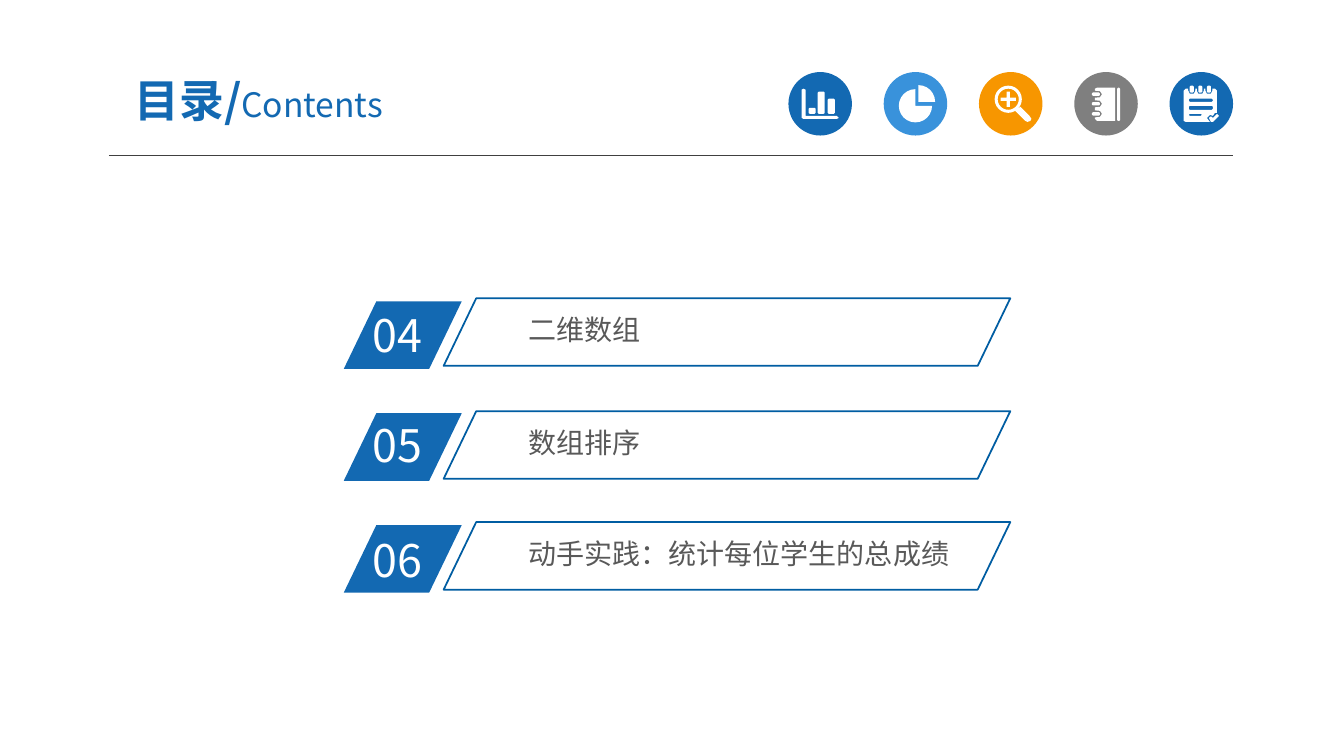
from dataclasses import dataclass
from math import cos, radians, sin

from lxml import etree
from pptx import Presentation
from pptx.dml.color import RGBColor
from pptx.enum.shapes import MSO_CONNECTOR, MSO_SHAPE
from pptx.enum.text import MSO_ANCHOR, PP_ALIGN
from pptx.oxml.ns import qn
from pptx.util import Inches, Pt

ELLIPSE, SLANTED = MSO_SHAPE.OVAL, MSO_SHAPE.PARALLELOGRAM
STRAIGHT = MSO_CONNECTOR.STRAIGHT
TOP, MIDDLE = MSO_ANCHOR.TOP, MSO_ANCHOR.MIDDLE
LEFT, CENTER = PP_ALIGN.LEFT, PP_ALIGN.CENTER


@dataclass(frozen=True)
class Theme:
    font: str = "Noto Sans CJK SC"
    blue: str = "1369B2"
    sky: str = "3992DB"
    orange: str = "F79600"
    gray: str = "7F7F7F"
    white: str = "FFFFFF"
    ink: str = "595959"
    rule: str = "404040"
    frame: str = "005DA2"
    heading: int = 32
    subheading: int = 24
    body: int = 20


def arc(x, y, radius, start=0, end=360, step=15):
    """Points along a circle, clockwise from the right, in degrees."""
    return [(x + radius * cos(radians(angle)), y + radius * sin(radians(angle)))
            for angle in range(start, end + 1, step)]


def bar(left, top, right, bottom, cut=0.01):
    """Rectangle between four edges with its corners cut off."""
    return [(left + cut, top), (right - cut, top), (right, top + cut),
            (right, bottom - cut), (right - cut, bottom), (left + cut, bottom),
            (left, bottom - cut), (left, top + cut)]


def bar_chart_icon():
    axes = [(7.95, 0.89), (7.97, 0.88), (7.99, 0.89), (7.99, 1.15), (8.3, 1.15),
            (8.32, 1.17), (8.3, 1.18), (7.97, 1.18), (7.95, 1.17)]
    columns = ((8.02, 1.07), (8.11, 0.91), (8.21, 0.98))
    return [axes] + [bar(left, top, left + 0.07, 1.13) for left, top in columns]


def pie_icon():
    return [[(9.08, 1.05)] + arc(9.08, 1.05, 0.165, 0, 270),
            [(9.11, 1.01)] + arc(9.11, 1.01, 0.165, 270, 360)]


def magnifier_icon():
    x, y, reach, half = 10, 0.985, 0.075, 0.017
    plus = [(x - half, y - reach), (x + half, y - reach), (x + half, y - half),
            (x + reach, y - half), (x + reach, y + half), (x + half, y + half),
            (x + half, y + reach), (x - half, y + reach), (x - half, y + half),
            (x - reach, y + half), (x - reach, y - half), (x - half, y - half)]
    handle = [(10.07, 1.1), (10.1, 1.08), (10.12, 1.06), (10.21, 1.15),
              (10.23, 1.18), (10.22, 1.2), (10.19, 1.21), (10.17, 1.2)]
    return [arc(x, y, 0.135), arc(x, y, 0.105), plus, handle]


def notebook_icon():
    rings = (0.935, 1.03, 1.13)
    cover = [(10.86, 0.88), (10.88, 0.87), (11.06, 0.87), (11.06, 1.2),
             (10.88, 1.2), (10.86, 1.18)]
    for y in reversed(rings):
        cover += [(10.86, y + 0.035), (10.91, y + 0.03), (10.93, y),
                  (10.91, y - 0.03), (10.86, y - 0.035)]
    return ([cover, bar(11.08, 0.87, 11.11, 1.2)]
            + [bar(10.83, y - 0.017, 10.91, y + 0.017) for y in rings])


def notepad_icon():
    rings = (11.82, 11.905, 11.99)
    sheet = [(11.74, 0.9), (11.76, 0.88)]
    for x in rings:
        sheet += [(x - 0.035, 0.88), (x - 0.035, 0.9), (x - 0.02, 0.93),
                  (x + 0.02, 0.93), (x + 0.035, 0.9), (x + 0.035, 0.88)]
    sheet += [(12.05, 0.88), (12.07, 0.9), (12.07, 1.12), (12.05, 1.12),
              (12.03, 1.15), (12, 1.14), (11.97, 1.17), (12, 1.21),
              (11.76, 1.21), (11.74, 1.2)]
    lines = ((0.98, 12.03, 1.01), (1.05, 12.03, 1.09), (1.13, 11.92, 1.15))
    tick = [(11.99, 1.17), (12.01, 1.155), (12.03, 1.17), (12.07, 1.13),
            (12.09, 1.15), (12.03, 1.21), (12.01, 1.21)]
    return ([sheet, tick]
            + [bar(x - 0.02, 0.85, x + 0.02, 0.92) for x in rings]
            + [bar(11.79, top, right, bottom) for top, right, bottom in lines])


class ContentsPage:
    def __init__(self, page, theme):
        self.page = page
        self.theme = theme

    def paint(self, shape, fill=None, line=None):
        shape.shadow.inherit = False
        if fill:
            shape.fill.solid()
            shape.fill.fore_color.rgb = RGBColor.from_string(fill)
        else:
            shape.fill.background()
        if line:
            shape.line.color.rgb = RGBColor.from_string(line)
            shape.line.width = Pt(1.25)
        else:
            shape.line.fill.background()

    def shape(self, kind, box, fill=None, line=None, adjust=()):
        shape = self.page.shapes.add_shape(kind, *map(Inches, box))
        for index, value in enumerate(adjust):
            shape.adjustments[index] = value
        self.paint(shape, fill, line)

    def icon(self, contours):
        """One white outline; a contour inside another cuts a hole."""
        builder = None
        for contour in contours:
            start, *others = [tuple(map(Inches, point)) for point in contour]
            if builder is None:
                builder = self.page.shapes.build_freeform(*start, scale=1.0)
            else:
                builder.move_to(*start)
            builder.add_line_segments(others, close=True)
        self.paint(builder.convert_to_shape(), self.theme.white)

    def rule(self, start, end, color, width):
        rule = self.page.shapes.add_connector(STRAIGHT, *map(Inches, start + end))
        rule.line.color.rgb = RGBColor.from_string(color)
        rule.line.width = Pt(width)
        etree.SubElement(rule._element.spPr, qn("a:effectLst"))

    def text(self, box, spans, align=LEFT, anchor=TOP, margins=(0.1, 0.05)):
        """Spans are tuples of text, size, color and bold."""
        frame = self.page.shapes.add_textbox(*map(Inches, box)).text_frame
        side, edge = map(Inches, margins)
        layout = {"word_wrap": True, "vertical_anchor": anchor,
                  "margin_left": side, "margin_right": side,
                  "margin_top": edge, "margin_bottom": edge}
        for name, value in layout.items():
            setattr(frame, name, value)
        para = frame.paragraphs[0]
        para.alignment = align
        for words, size, color, bold in spans:
            span = para.add_run()
            span.text = words
            values = {"name": self.theme.font, "size": Pt(size), "bold": bold}
            for name, value in values.items():
                setattr(span.font, name, value)
            span.font.color.rgb = RGBColor.from_string(color)
            east_asian = etree.SubElement(span.font._element, qn("a:ea"))
            east_asian.set("typeface", self.theme.font)

    def header(self):
        theme = self.theme
        self.rule((1.08, 1.545), (12.23, 1.545), theme.rule, 0.75)
        icons = ((theme.blue, bar_chart_icon), (theme.sky, pie_icon),
                 (theme.orange, magnifier_icon), (theme.gray, notebook_icon),
                 (theme.blue, notepad_icon))
        for index, (color, contours) in enumerate(icons):
            self.shape(ELLIPSE, (7.82 + 0.945 * index, 0.715, 0.63, 0.63), color)
            self.icon(contours())
        self.text((0.92, 0.63, 3.29, 0.72),
                  [("目录/", theme.heading, theme.blue, True),
                   ("Contents", theme.subheading, theme.blue, False)],
                  CENTER, MIDDLE, (0.13, 0.07))

    def chapter(self, badge_top, number_top, frame_top, number, title):
        theme = self.theme
        slant = (0.482,)
        self.shape(SLANTED, (3.41, badge_top, 1.17, 0.67), theme.blue, adjust=slant)
        self.text((3.6, number_top, 1.12, 0.64),
                  [(number, theme.heading, theme.white, False)])
        self.text((5.17, frame_top + 0.1, 4.41, 0.41),
                  [(title, theme.body, theme.ink, False)], margins=(0.07, 0.04))
        self.shape(SLANTED, (4.4, frame_top, 5.62, 0.67), line=theme.frame, adjust=slant)


def main():
    deck = Presentation()
    deck.slide_width, deck.slide_height = Inches(13.33), Inches(7.5)
    contents = ContentsPage(deck.slides.add_slide(deck.slide_layouts[6]), Theme())
    contents.header()
    chapters = ((2.99, 3, 2.96, "04", "二维数组"),
                (4.1, 4.09, 4.08, "05", "数组排序"),
                (5.21, 5.24, 5.18, "06", "动手实践：统计每位学生的总成绩"))
    for chapter in chapters:
        contents.chapter(*chapter)
    deck.save("out.pptx")


if __name__ == "__main__":
    main()
